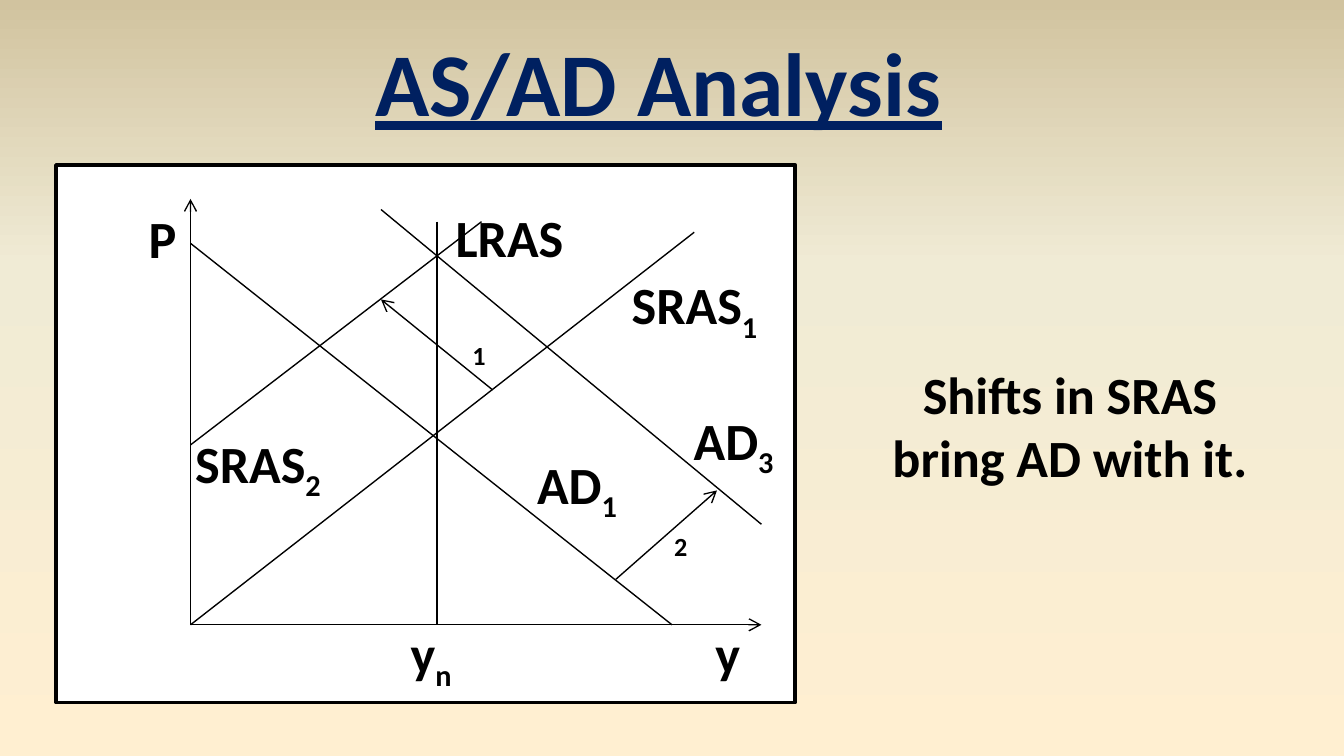
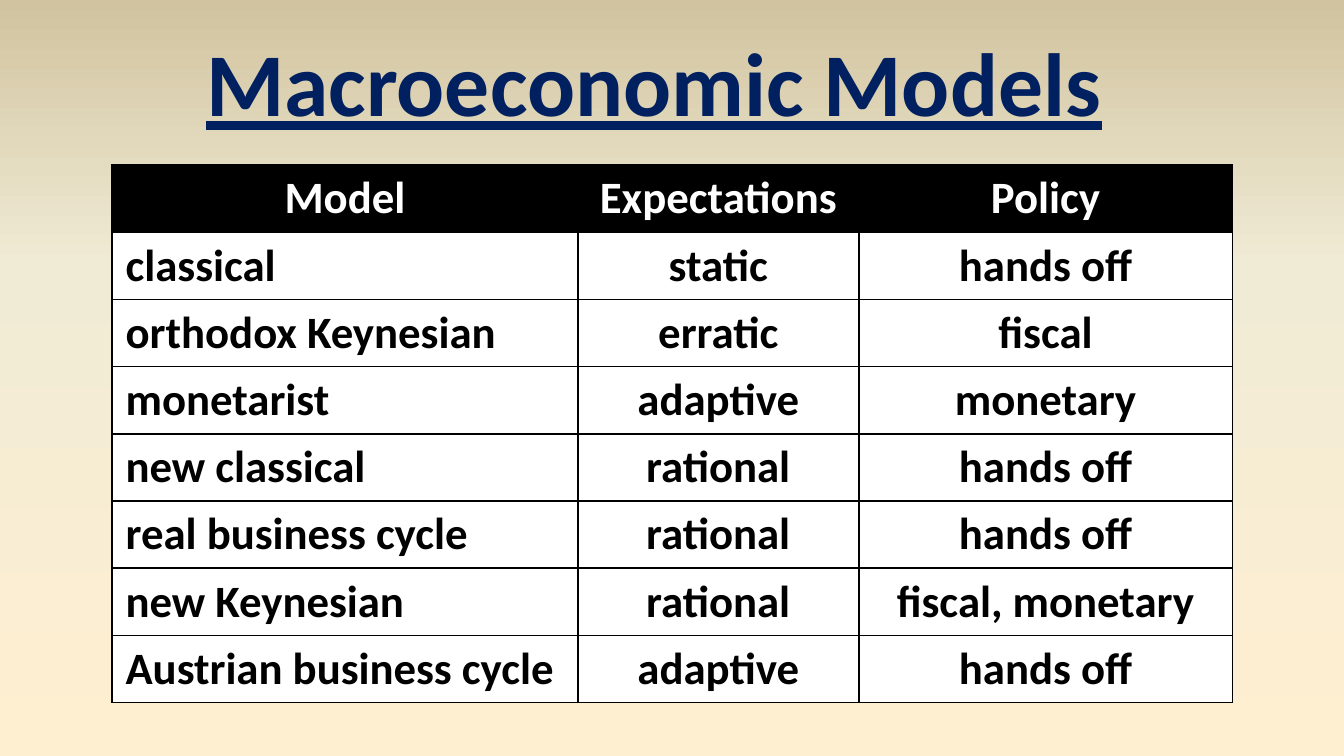
from dataclasses import dataclass

from lxml.etree import SubElement
from pptx import Presentation
from pptx.dml.color import RGBColor
from pptx.enum.shapes import MSO_CONNECTOR as Connector, MSO_SHAPE as Preset
from pptx.enum.text import MSO_ANCHOR as Anchor, MSO_AUTO_SIZE as AutoSize, PP_ALIGN as Align
from pptx.oxml import parse_xml
from pptx.oxml.ns import nsdecls, qn
from pptx.util import Cm, Pt

FONT = "Calibri"
COLORS = {
    "navy": "002060",
    "black": "000000",
    "white": "FFFFFF",
    "cream": "FFEFD1",
    "ivory": "F0EBD5",
    "sand": "D1C39F",
}
BACKGROUND_STOPS = [(0, "cream"), (65, "ivory"), (100, "sand")]
TITLE_ONLY = 5
CONTENT_TOP = 3.12
LABEL_HEIGHT = 1.45

# Corners of the diagram, in centimetres
ORIGIN_X, ORIGIN_Y = 3.6, 11.81
AXIS_TOP, AXIS_RIGHT = 3.76, 14.39
NATURAL_OUTPUT_X = 8.26


@dataclass(frozen=True)
class Line:
    start: tuple[float, float]
    end: tuple[float, float]
    arrow: bool = False


@dataclass(frozen=True)
class Label:
    text: str
    left: float
    top: float
    width: float
    height: float = LABEL_HEIGHT
    subscript: str = ""
    size: int = 28


LINES = [
    # Axes
    Line((ORIGIN_X, ORIGIN_Y), (ORIGIN_X, AXIS_TOP), arrow=True),
    Line((ORIGIN_X, ORIGIN_Y), (AXIS_RIGHT, ORIGIN_Y), arrow=True),
    # AD1, SRAS1, LRAS, SRAS2, AD3
    Line((ORIGIN_X, 4.6), (12.7, ORIGIN_Y)),
    Line((13.12, 4.39), (ORIGIN_X, ORIGIN_Y)),
    Line((NATURAL_OUTPUT_X, 4.19), (NATURAL_OUTPUT_X, ORIGIN_Y)),
    Line((9.1, 4.19), (ORIGIN_X, 8.41)),
    Line((7.2, 3.96), (AXIS_RIGHT, 9.91)),
    # Shifts of SRAS and AD
    Line((9.31, 7.37), (7.2, 5.66), arrow=True),
    Line((11.64, 10.95), (13.55, 9.27), arrow=True),
]

LABELS = [
    Label("P", 2.12, 3.78, 1.9),
    Label("y", 12.91, 11.61, 1.69),
    Label("y", 7.2, 11.61, 1.9, subscript="n"),
    Label("LRAS", 8.04, 3.76, 3.18),
    Label("SRAS", 11.43, 5.03, 3.39, subscript="1"),
    Label("SRAS", 3.18, 8.03, 3.39, subscript="2"),
    Label("AD", 9.74, 8.43, 2.33, subscript="1"),
    Label("AD", 12.7, 7.59, 2.33, subscript="3"),
    Label("1", 8.68, 6.3, 0.64, 0.86, size=14),
    Label("2", 12.49, 9.91, 0.64, 0.86, size=14),
]

CONCLUSION = Label("Shifts in SRAS bring AD with it.", 16.31, 6.73, 7.82, 2.64)

COLUMN_WIDTHS = [8.8, 5.31, 7.06]
ROW_HEIGHT = 1.27
MODELS = [
    ("Model", "Expectations", "Policy"),
    ("classical", "static", "hands off"),
    ("orthodox Keynesian", "erratic", "fiscal"),
    ("monetarist", "adaptive", "monetary"),
    ("new classical", "rational", "hands off"),
    ("real business cycle", "rational", "hands off"),
    ("new Keynesian", "rational", "fiscal, monetary"),
    ("Austrian business cycle", "adaptive", "hands off"),
]


def color(name: str) -> RGBColor:
    return RGBColor.from_string(COLORS[name])


def format_paragraph(paragraph, size: int, color_name: str = "black", align=Align.CENTER) -> None:
    paragraph.alignment = align
    font = paragraph.font
    font.name, font.size, font.bold = FONT, Pt(size), True
    font.color.rgb = color(color_name)


def set_background(master) -> None:
    """Give every slide the same vertical gradient."""
    fill = master.background.fill
    fill.gradient()
    fill.gradient_angle = 90
    stops = master.element.find(".//" + qn("a:gsLst"))
    for stop in list(stops):
        stops.remove(stop)
    for position, name in BACKGROUND_STOPS:
        stop = SubElement(stops, qn("a:gs"), pos=str(position * 1000))
        SubElement(stop, qn("a:srgbClr"), val=COLORS[name])


def add_titled_slide(presentation, text: str, left: float, width: float):
    slide = presentation.slides.add_slide(presentation.slide_layouts[TITLE_ONLY])
    title = slide.shapes.title
    title.left, title.top, title.width, title.height = Cm(left), Cm(0.38), Cm(width), Cm(2.31)
    frame = title.text_frame
    frame.text = text
    frame.word_wrap = False
    frame.auto_size = AutoSize.NONE
    frame.vertical_anchor = Anchor.TOP
    paragraph = frame.paragraphs[0]
    format_paragraph(paragraph, 48, "navy")
    paragraph.font.underline = True
    return slide


def add_label(shapes, label: Label) -> None:
    box = shapes.add_textbox(Cm(label.left), Cm(label.top), Cm(label.width), Cm(label.height))
    box.text_frame.word_wrap = True
    paragraph = box.text_frame.paragraphs[0]
    format_paragraph(paragraph, label.size)
    paragraph.add_run().text = label.text
    if label.subscript:
        run = paragraph.add_run()
        run.text = label.subscript
        run._r.get_or_add_rPr().set("baseline", "-25000")


def add_line(shapes, line: Line) -> None:
    connector = shapes.add_connector(
        Connector.STRAIGHT, *(Cm(value) for value in line.start + line.end)
    )
    connector.line.color.rgb = color("black")
    connector.line.width = Pt(0.75)
    properties = connector._element.spPr
    if line.arrow:
        SubElement(properties.find(qn("a:ln")), qn("a:tailEnd"), type="arrow")
    SubElement(properties, qn("a:effectLst"))


def add_diagram(slide) -> None:
    shapes = slide.shapes.add_group_shape().shapes
    panel = shapes.add_shape(Preset.RECTANGLE, Cm(1.06), Cm(CONTENT_TOP), Cm(13.97), Cm(10.16))
    panel.shadow.inherit = False
    panel.fill.solid()
    panel.fill.fore_color.rgb = color("white")
    panel.line.color.rgb = color("black")
    panel.line.width = Pt(2)
    for line in LINES:
        add_line(shapes, line)
    for label in LABELS:
        add_label(shapes, label)


def format_cell(cell, text: str, is_header: bool, align) -> None:
    cell.text = text
    cell.vertical_anchor = Anchor.MIDDLE
    cell.margin_top = cell.margin_bottom = Cm(0.1)
    cell.fill.solid()
    cell.fill.fore_color.rgb = color("black" if is_header else "white")
    format_paragraph(
        cell.text_frame.paragraphs[0], 24, "white" if is_header else "black", align
    )
    cell_properties = cell._tc.get_or_add_tcPr()
    for index, side in enumerate(("lnL", "lnR", "lnT", "lnB")):
        border = parse_xml(
            f'<a:{side} {nsdecls("a")} w="{Pt(1)}"><a:solidFill>'
            f'<a:srgbClr val="{COLORS["black"]}"/></a:solidFill></a:{side}>'
        )
        cell_properties.insert(index, border)


def add_model_table(slide) -> None:
    table = slide.shapes.add_table(
        len(MODELS), len(COLUMN_WIDTHS), Cm(2.12), Cm(CONTENT_TOP),
        Cm(sum(COLUMN_WIDTHS)), Cm(ROW_HEIGHT * len(MODELS)),
    ).table
    table.horz_banding = False
    for column, width in zip(table.columns, COLUMN_WIDTHS):
        column.width = Cm(width)
    for row_index, texts in enumerate(MODELS):
        table.rows[row_index].height = Cm(ROW_HEIGHT)
        is_header = row_index == 0
        for column_index, text in enumerate(texts):
            align = Align.CENTER if is_header or column_index else Align.LEFT
            format_cell(table.cell(row_index, column_index), text, is_header, align)


def main() -> None:
    presentation = Presentation()
    presentation.slide_width, presentation.slide_height = Cm(25.4), Cm(14.29)
    set_background(presentation.slide_master)

    # Slide 1: shifts of the curves
    slide = add_titled_slide(presentation, "AS/AD Analysis", 6.78, 11.33)
    add_label(slide.shapes, CONCLUSION)
    add_diagram(slide)

    # Slide 2: comparison of the models
    slide = add_titled_slide(presentation, "Macroeconomic Models", 3.61, 17.5)
    add_model_table(slide)

    presentation.save("out.pptx")


if __name__ == "__main__":
    main()
